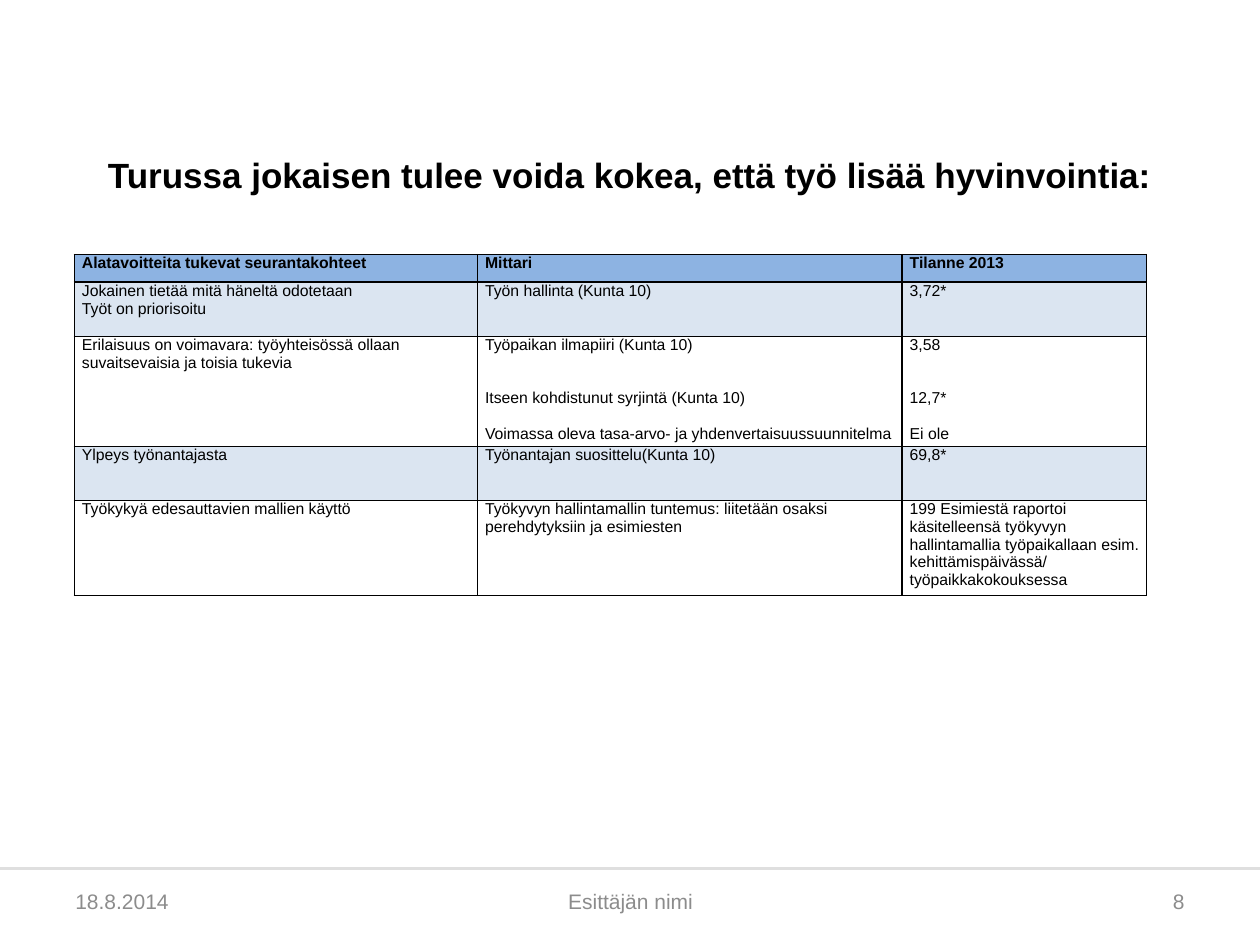
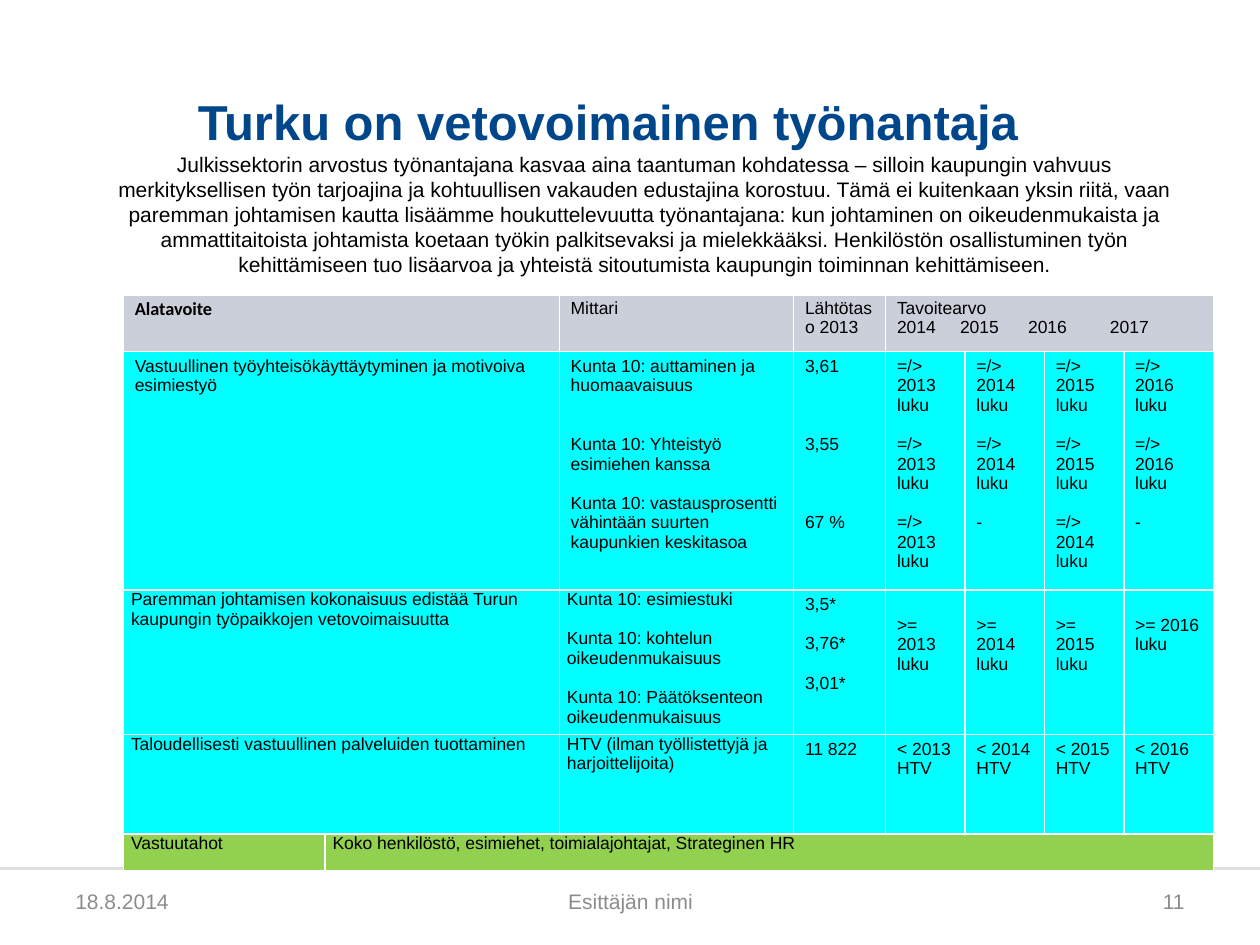
"""Build two slides on well-being at work and the city's appeal as an employer."""
from lxml import etree
from pptx import Presentation
from pptx.dml.color import RGBColor
from pptx.enum.shapes import MSO_CONNECTOR, MSO_SHAPE
from pptx.enum.text import MSO_ANCHOR, MSO_AUTO_SIZE, PP_ALIGN
from pptx.oxml.ns import qn
from pptx.util import Inches, Pt

LEFT, CENTER, RIGHT = PP_ALIGN.LEFT, PP_ALIGN.CENTER, PP_ALIGN.RIGHT
TOP, MIDDLE, BOTTOM = MSO_ANCHOR.TOP, MSO_ANCHOR.MIDDLE, MSO_ANCHOR.BOTTOM
NO_AUTOSIZE = MSO_AUTO_SIZE.NONE
RECTANGLE, STRAIGHT = MSO_SHAPE.RECTANGLE, MSO_CONNECTOR.STRAIGHT

BLACK, WHITE, GREY, RULE_GREY = "000000", "FFFFFF", "8C8C8C", "DFDFDF"
NAVY, HEADER_BLUE, PALE_BLUE = "00468B", "8DB3E2", "DBE5F1"
HEADER_GREY, CYAN, GREEN = "CBCFDA", "00FFFF", "92D050"
LINE_HEIGHT = 1.12


def write(frame, text, size=12, color=BLACK, bold=False, font="Arial",
          align=LEFT, anchor=TOP, tabs=()):
    """Write one paragraph per line; an empty line becomes space before the next."""
    frame.clear()
    frame.word_wrap = True
    frame.vertical_anchor = anchor
    paragraph, gap = None, 0
    for line in text.split("\n"):
        if not line:
            gap += 1
            continue
        paragraph = frame.add_paragraph() if paragraph else frame.paragraphs[0]
        if tabs:
            stops = etree.SubElement(paragraph._p.get_or_add_pPr(), qn("a:tabLst"))
            for stop in tabs:
                etree.SubElement(stops, qn("a:tab"), pos=str(Inches(stop)), algn="l")
        paragraph.alignment = align
        if gap:
            paragraph.space_before = Pt(round(gap * size * LINE_HEIGHT, 1))
        gap = 0
        run = paragraph.add_run()
        run.text = line
        run.font.name, run.font.size, run.font.bold = font, Pt(size), bold
        run.font.color.rgb = RGBColor.from_string(color)


def add_grid(slide, left, top, widths, heights, rows, fills, border,
             size, header_bold=False, top_border=1):
    """Add a bordered table; None in a row extends the cell before it."""
    table = slide.shapes.add_table(
        len(rows), len(widths), Inches(left), Inches(top),
        Inches(sum(widths)), Inches(sum(heights))).table
    table.first_row = table.horz_banding = False
    for column, width in zip(table.columns, widths):
        column.width = Inches(width)
    for row, height in zip(table.rows, heights):
        row.height = Inches(height)
    for r, (texts, fill) in enumerate(zip(rows, fills)):
        for c, text in enumerate(texts):
            cell = table.cell(r, c)
            cell.margin_left = cell.margin_right = Inches(0.06)
            cell.margin_top = cell.margin_bottom = 0
            if fill:
                cell.fill.solid()
                cell.fill.fore_color.rgb = RGBColor.from_string(fill)
            else:
                cell.fill.background()
            properties = cell._tc.get_or_add_tcPr()
            for position, side in enumerate(("lnL", "lnR", "lnT", "lnB")):
                weight = top_border if r == 0 and side == "lnT" else 1
                edge = etree.Element(qn(f"a:{side}"), w=str(Pt(weight)))
                paint = etree.SubElement(edge, qn("a:solidFill"))
                etree.SubElement(paint, qn("a:srgbClr"), val=border)
                properties.insert(position, edge)
            if text is None:
                continue
            last = c
            while last + 1 < len(texts) and texts[last + 1] is None:
                last += 1
            if last > c:
                cell.merge(table.cell(r, last))
            write(cell.text_frame, text, size=size, bold=header_bold and r == 0)
    return table


prs = Presentation()
prs.slide_width, prs.slide_height = Inches(10), Inches(7.5)
title_only = prs.slide_layouts[5]

wellbeing = prs.slides.add_slide(title_only)
employer = prs.slides.add_slide(title_only)

for slide, number in ((wellbeing, "8"), (employer, "11")):
    band = slide.shapes.add_shape(RECTANGLE, 0, Inches(6.9), Inches(10), Inches(0.6))
    band.shadow.inherit = False
    band.fill.solid()
    band.fill.fore_color.rgb = RGBColor.from_string(WHITE)
    band.line.fill.background()
    rule = slide.shapes.add_connector(
        STRAIGHT, 0, Inches(6.89), Inches(10), Inches(6.89))
    rule.line.color.rgb = RGBColor.from_string(RULE_GREY)
    rule.line.width = Pt(1.75)
    etree.SubElement(rule._element.spPr, qn("a:effectLst"))
    for text, left, width, align in (("18.8.2014", 0.5, 2.33, LEFT),
                                     ("Esittäjän nimi", 3.42, 3.17, CENTER),
                                     (number, 7.17, 2.33, RIGHT)):
        footer = slide.shapes.add_textbox(
            Inches(left), Inches(6.95), Inches(width), Inches(0.4))
        write(footer.text_frame, text, color=GREY, align=align, anchor=MIDDLE)

for slide, text, box, inset, style in (
        (wellbeing, "Turussa jokaisen tulee voida kokea, että työ lisää hyvinvointia:",
         (0.75, 0.68, 8.5, 0.87), (0, 0),
         dict(size=20, align=CENTER, anchor=BOTTOM)),
        (employer, "Turku on vetovoimainen työnantaja",
         (1.47, 0.68, 6.77, 0.57), (0.1, 0.05),
         dict(size=28, color=NAVY))):
    title = slide.shapes.title
    title.left, title.top, title.width, title.height = map(Inches, box)
    frame = title.text_frame
    frame.auto_size = NO_AUTOSIZE
    frame.margin_left = frame.margin_right = Inches(inset[0])
    frame.margin_top = frame.margin_bottom = Inches(inset[1])
    write(frame, text, bold=True, **style)

follow_up = [
    ["Alatavoitteita tukevat seurantakohteet", "Mittari", "Tilanne 2013"],
    ["Jokainen tietää mitä häneltä odotetaan\nTyöt on priorisoitu",
     "Työn hallinta (Kunta 10)", "3,72*"],
    ["Erilaisuus on voimavara: työyhteisössä ollaan suvaitsevaisia ja toisia tukevia",
     "Työpaikan ilmapiiri (Kunta 10)\n\n\nItseen kohdistunut syrjintä (Kunta 10)\n\n"
     "Voimassa oleva tasa-arvo- ja yhdenvertaisuussuunnitelma",
     "3,58\n\n\n12,7*\n\nEi ole"],
    ["Ylpeys työnantajasta", "Työnantajan suosittelu(Kunta 10)", "69,8*"],
    ["Työkykyä edesauttavien mallien käyttö",
     "Työkyvyn hallintamallin tuntemus: liitetään osaksi perehdytyksiin ja esimiesten",
     "199 Esimiestä raportoi käsitelleensä työkyvyn hallintamallia työpaikallaan "
     "esim. kehittämispäivässä/ työpaikkakokouksessa"],
]
add_grid(wellbeing, 0.59, 2.02, [3.2, 3.37, 1.94], [0.22, 0.43, 0.87, 0.43, 0.7],
         follow_up, [HEADER_BLUE, PALE_BLUE, None, PALE_BLUE, None],
         BLACK, size=9, header_bold=True)

years = range(2013, 2017)
community_targets = [f"=/> {year} luku\n\n=/> {year} luku\n\n{response}"
                     for year, response in zip(
                         years, ("=/> 2013 luku", "-", "=/> 2014 luku", "-"))]
leadership_targets = [">=\n2013 luku"] + [f">= {year} luku" for year in years[1:]]
staffing_targets = [f"< {year} HTV" for year in years]
goals = [
    ["Alatavoite", None, "Mittari", "Lähtötaso 2013", "Tavoitearvo", None, None, None],
    ["Vastuullinen työyhteisökäyttäytyminen ja motivoiva esimiestyö", None,
     "Kunta 10: auttaminen ja huomaavaisuus\n\n\nKunta 10: Yhteistyö esimiehen kanssa"
     "\n\nKunta 10: vastausprosentti vähintään suurten kaupunkien keskitasoa",
     "3,61\n\n\n\n3,55\n\n\n\n67 %", *community_targets],
    ["Paremman johtamisen kokonaisuus edistää Turun kaupungin työpaikkojen "
     "vetovoimaisuutta", None,
     "Kunta 10: esimiestuki\n\nKunta 10: kohtelun oikeudenmukaisuus\n\n"
     "Kunta 10: Päätöksenteon oikeudenmukaisuus",
     "3,5*\n\n3,76*\n\n3,01*", *leadership_targets],
    ["Taloudellisesti vastuullinen palveluiden tuottaminen", None,
     "HTV (ilman työllistettyjä ja harjoittelijoita)", "11 822", *staffing_targets],
    ["Vastuutahot", "Koko henkilöstö, esimiehet, toimialajohtajat, Strateginen HR"]
    + [None] * 6,
]
goal_table = add_grid(
    employer, 0.98, 2.33, [1.6, 1.86, 1.86, 0.73, 0.63, 0.63, 0.63, 0.71],
    [0.46, 1.79, 1.1, 0.79, 0.29], goals,
    [HEADER_GREY, CYAN, CYAN, CYAN, GREEN], WHITE, size=10, top_border=3)
for r in range(4):
    for c in range(0 if r < 2 else 3, 8):
        cell = goal_table.cell(r, c)
        cell.margin_left = cell.margin_right = Inches(0.09)
        cell.margin_top = Inches(0.2 if r == 2 and c > 3 else 0.04)
        cell.margin_bottom = Inches(0.04)
write(goal_table.cell(0, 0).text_frame, "Alatavoite",
      size=10.5, bold=True, font="Calibri")
write(goal_table.cell(0, 4).text_frame, "Tavoitearvo\n2014\t2015\t2016\t2017",
      size=10, tabs=(0.5, 1.04, 1.69))

summary = employer.shapes.add_textbox(
    Inches(0.83), Inches(1.15), Inches(8.58), Inches(1.11))
write(summary.text_frame,
      "Julkissektorin arvostus työnantajana kasvaa aina taantuman kohdatessa – silloin "
      "kaupungin vahvuus merkityksellisen työn tarjoajina ja kohtuullisen vakauden "
      "edustajina korostuu. Tämä ei kuitenkaan yksin riitä, vaan paremman johtamisen "
      "kautta lisäämme houkuttelevuutta työnantajana: kun johtaminen on "
      "oikeudenmukaista ja ammattitaitoista johtamista koetaan työkin palkitsevaksi ja "
      "mielekkääksi. Henkilöstön osallistuminen työn kehittämiseen tuo lisäarvoa ja "
      "yhteistä sitoutumista kaupungin toiminnan kehittämiseen.", align=CENTER)

prs.save("out.pptx")
